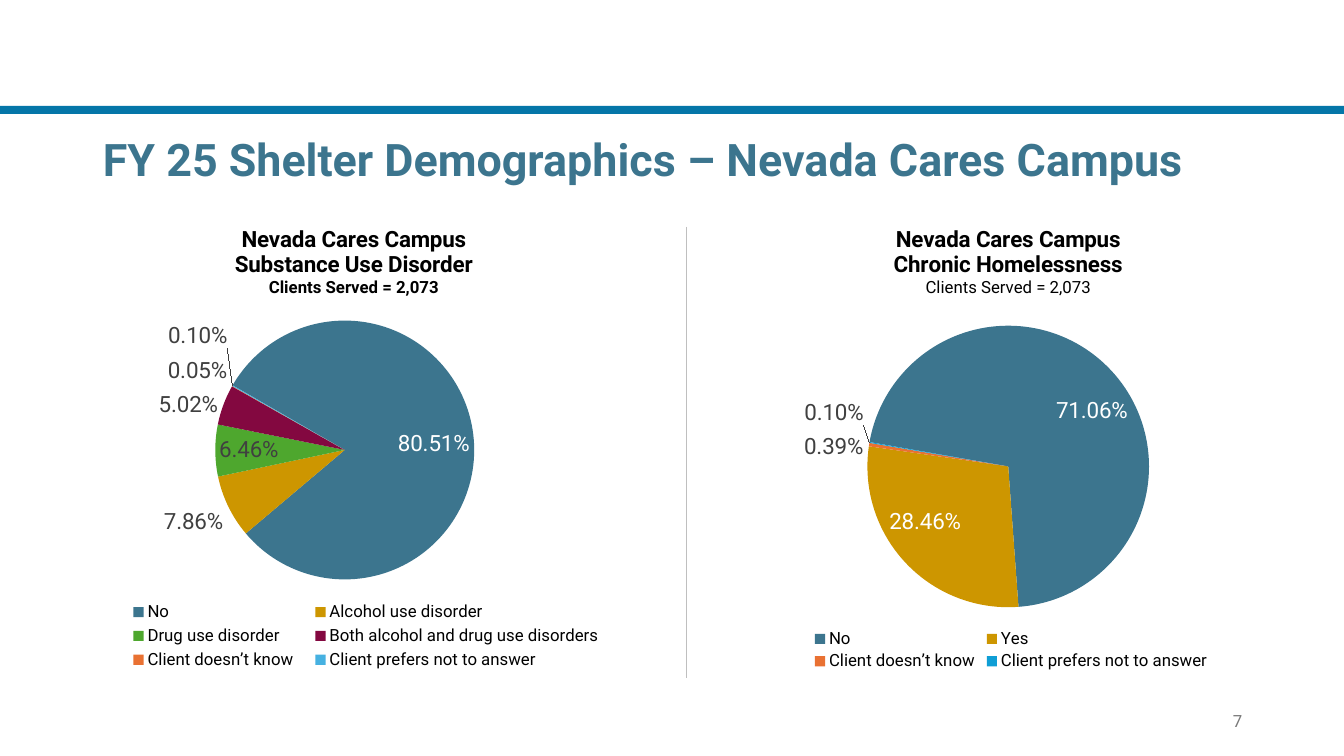
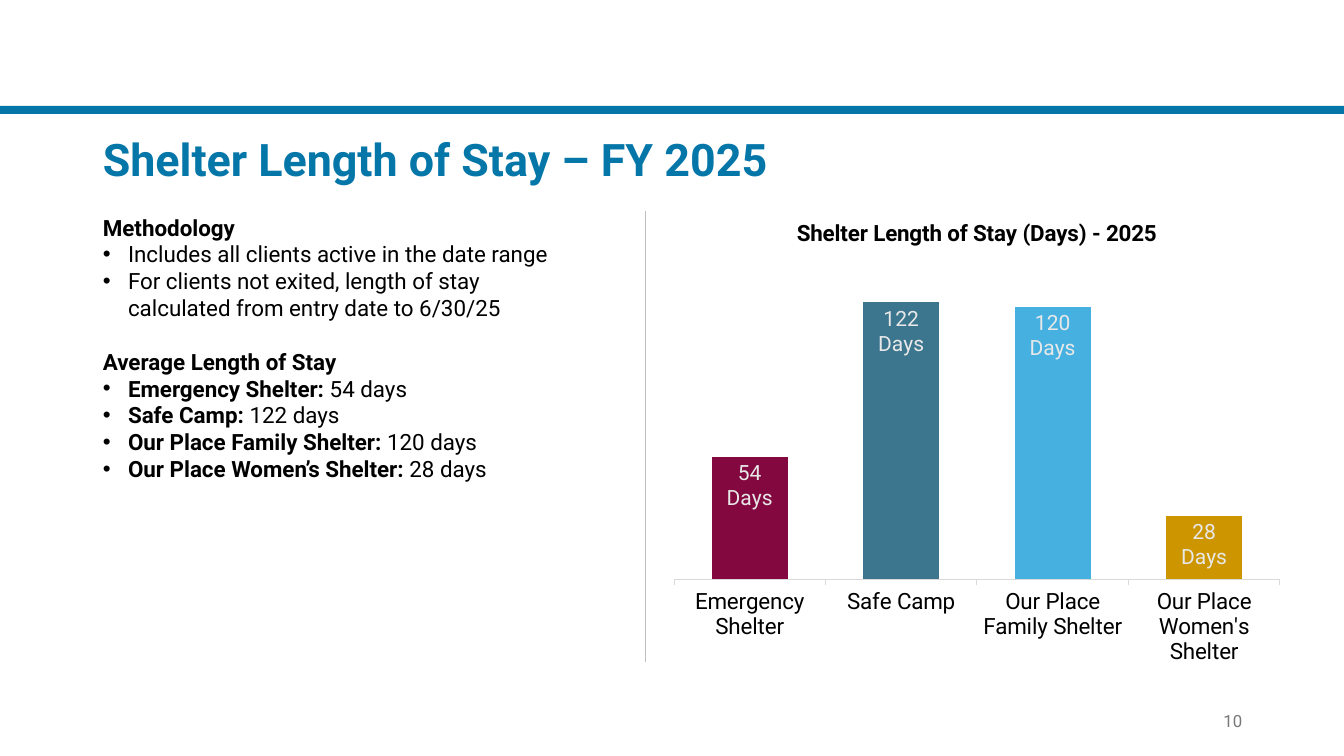
from lxml.etree import SubElement
from pptx import Presentation
from pptx.chart.data import CategoryChartData
from pptx.dml.color import RGBColor
from pptx.enum.chart import (XL_CHART_TYPE, XL_LABEL_POSITION,
                             XL_LEGEND_POSITION, XL_TICK_LABEL_POSITION,
                             XL_TICK_MARK)
from pptx.enum.shapes import MSO_CONNECTOR, MSO_SHAPE
from pptx.enum.text import MSO_ANCHOR, MSO_AUTO_SIZE, PP_ALIGN
from pptx.oxml.ns import qn
from pptx.util import Pt

SCALE = 9144  # EMU in one px, 100 px to the inch
FONT = "Roboto"
BLUE, TEAL, GOLD, GREEN = "0476A8", "3C758E", "CD9600", "4EA72E"
WINE, RUST, SKY, AZURE = "830840", "E97132", "46B1E1", "0F9ED5"
BLACK, WHITE, DARK, GRAY = "000000", "FFFFFF", "404040", "797979"
PALE, RULE, AXIS = "E8E8E8", "BFBFBF", "D9D9D9"


def px(*nums):
    return [n * SCALE for n in nums]


def color(code):
    return RGBColor.from_string(code)


def style(font, size, code=BLACK, bold=False):
    font.name, font.size, font.bold = FONT, Pt(size), bold
    font.color.rgb = color(code)


def add_run(para, text, size, code=BLACK, bold=False):
    run = para.add_run()
    run.text = text
    style(run.font, size, code, bold)


def next_para(frame, index):
    return frame.add_paragraph() if index else frame.paragraphs[0]


def set_layout(node, index, area, inner=False):
    """Place a chart part by fractions of the chart: x, y, w, h."""
    for old in node.findall(qn("c:layout")):
        node.remove(old)
    layout = node.makeelement(qn("c:layout"))
    node.insert(index, layout)
    manual = SubElement(layout, qn("c:manualLayout"))
    pairs = [("layoutTarget", "inner")] if inner else []
    pairs += [("xMode", "edge"), ("yMode", "edge")]
    pairs += zip("xywh", area)
    for tag, val in pairs:
        SubElement(manual, qn("c:" + tag)).set("val", str(val))


class Deck:
    def __init__(self):
        self.prs = Presentation()
        self.prs.slide_width, self.prs.slide_height = px(1333, 750)
        self.slide = None

    # Shared frame: band, title and page number
    def add_slide(self, layout, title, code, page):
        self.slide = self.prs.slides.add_slide(self.prs.slide_layouts[layout])
        self.band()
        self.title(title, code)
        self.page(page)

    def band(self):
        band = self.slide.shapes.add_shape(MSO_SHAPE.RECTANGLE,
                                           *px(0, 105, 1333, 8))
        band.shadow.inherit = False
        band.fill.solid()
        band.fill.fore_color.rgb = color(BLUE)
        band.line.fill.background()

    def place(self, shape, *box):
        shape.left, shape.top, shape.width, shape.height = px(*box)
        frame = shape.text_frame
        frame.word_wrap = True
        frame.auto_size = MSO_AUTO_SIZE.NONE
        return frame

    def title(self, text, code):
        frame = self.place(self.slide.shapes.title, 92, 123, 1150, 75)
        frame.vertical_anchor = MSO_ANCHOR.MIDDLE
        para = frame.paragraphs[0]
        para.alignment, para.line_spacing = PP_ALIGN.LEFT, 0.9
        add_run(para, text, 32, code, True)

    def page(self, num):
        box = self.slide.shapes.add_textbox(*px(942, 695, 300, 40))
        box.text_frame.word_wrap = True
        box.text_frame.vertical_anchor = MSO_ANCHOR.MIDDLE
        para = box.text_frame.paragraphs[0]
        para.alignment = PP_ALIGN.RIGHT
        add_run(para, str(num), 12, GRAY)

    def divide(self, x, top, end):
        line = self.slide.shapes.add_connector(MSO_CONNECTOR.STRAIGHT,
                                               *px(x, top, x, end))
        line.line.color.rgb = color(RULE)
        line.line.width = Pt(1)
        SubElement(line._element.spPr, qn("a:effectLst"))

    # Body text: groups of a heading and its bullets
    def body(self, groups, *box):
        frame = self.place(self.slide.placeholders[1], *box)
        frame.vertical_anchor = MSO_ANCHOR.TOP
        count = 0
        for head, items in groups:
            rows = [(False, head, "")] + [(True, *item) for item in items]
            for dot, bold, plain in rows:
                para = next_para(frame, count)
                self.bullet(para, dot)
                para.alignment = PP_ALIGN.LEFT
                para.space_before = Pt(0 if dot or not count else 19)
                if bold:
                    add_run(para, bold, 16, bold=True)
                if plain:
                    add_run(para, plain, 16)
                count += 1

    def bullet(self, para, dot):
        props = para._p.get_or_add_pPr()
        left = 25 * SCALE if dot else 0
        props.set("marL", str(left))
        props.set("indent", str(-left))
        if dot:
            SubElement(props, qn("a:buFont")).set("typeface", "Arial")
            SubElement(props, qn("a:buChar")).set("char", "•")
        else:
            SubElement(props, qn("a:buNone"))

    # Charts
    def chart(self, kind, box, heads, data, form, plot):
        """heads: (text, size, bold); data: (name, value, colour)."""
        table = CategoryChartData(number_format=form)
        table.categories = [row[0] for row in data]
        table.add_series("Series 1", [row[1] for row in data])
        chart = self.slide.shapes.add_chart(kind, *px(*box), table).chart
        style(chart.font, 16)
        chart.has_title = True
        frame = chart.chart_title.text_frame
        for i, head in enumerate(heads):
            text, size, bold = head
            add_run(next_para(frame, i), text, size, bold=bold)
        chart.has_legend = False
        set_layout(chart._chartSpace.chart.plotArea, 0, plot, True)
        series = chart.plots[0].series[0]
        for i, row in enumerate(data):
            part = series.points[i].format
            part.fill.solid()
            part.fill.fore_color.rgb = color(row[2])
            part.line.fill.background()
        return chart, series

    def labels(self, series, size, code, form, spot):
        marks = series.data_labels
        marks.show_value = True
        marks.number_format, marks.number_format_is_linked = form, False
        marks.position = spot
        style(marks.font, size, code)

    def pie(self, box, heads, data, start, plot, key, light):
        form, spot = "0.00%", XL_LABEL_POSITION.BEST_FIT
        chart, series = self.chart(XL_CHART_TYPE.PIE, box, heads, data,
                                   form, plot)
        chart.plots[0].vary_by_categories = True
        node = chart.plots[0]._element
        for old in node.findall(qn("c:firstSliceAng")):
            node.remove(old)
        SubElement(node, qn("c:firstSliceAng")).set("val", str(start))
        self.labels(series, 16, DARK, form, spot)
        for i in range(light):
            mark = series.points[i].data_label
            style(mark.font, 16, WHITE)
            mark.position = spot
        chart.has_legend = True
        legend = chart.legend
        legend.position = XL_LEGEND_POSITION.BOTTOM
        legend.include_in_layout = False
        style(legend.font, 12)
        set_layout(legend._element, 1, key)

    def bars(self, box, heads, data, plot, top):
        spot = XL_LABEL_POSITION.INSIDE_END
        chart, series = self.chart(XL_CHART_TYPE.COLUMN_CLUSTERED, box, heads,
                                   data, "General", plot)
        chart.plots[0].vary_by_categories = False
        chart.plots[0].gap_width = 100
        self.labels(series, 15, PALE, "General", spot)
        for i, row in enumerate(data):
            mark = series.points[i].data_label
            for j, text in enumerate((str(row[1]), "Days")):
                add_run(next_para(mark.text_frame, j), text, 15, PALE)
            mark.position = spot
        side, base = chart.value_axis, chart.category_axis
        side.minimum_scale, side.maximum_scale = 0, top
        side.has_major_gridlines = side.visible = False
        base.major_tick_mark = XL_TICK_MARK.OUTSIDE
        base.tick_label_position = XL_TICK_LABEL_POSITION.LOW
        base.format.line.color.rgb = color(AXIS)
        base.format.line.width = Pt(0.75)
        style(base.tick_labels.font, 16)


def main():
    deck = Deck()
    campus, served = "Nevada Cares Campus", "Clients Served = 2,073"
    unknown, private = "Client doesn’t know", "Client prefers not to answer"

    # Slide 1: two pies
    deck.add_slide(5, "FY 25 Shelter Demographics – " + campus, TEAL, 7)
    deck.divide(681, 225, 673)
    deck.pie((50, 206, 602, 467),
             [(campus, 16, True), ("Substance Use Disorder", 16, True),
              (served, 12, True)],
             [("No", 0.8051, TEAL),
              ("Alcohol use disorder", 0.0786, GOLD),
              ("Drug use disorder", 0.0646, GREEN),
              ("Both alcohol and drug use disorders", 0.0502, WINE),
              (unknown, 0.0005, RUST),
              (private, 0.001, SKY)],
             300, (0.27, 0.24, 0.43, 0.55), (0.11, 0.83, 0.82, 0.16), 1)
    deck.pie((709, 206, 582, 467),
             [(campus, 16, True), ("Chronic Homelessness", 16, True),
              (served, 12, False)],
             [("No", 0.7106, TEAL),
              ("Yes", 0.2846, GOLD),
              (unknown, 0.0039, RUST),
              (private, 0.001, AZURE)],
             280, (0.26, 0.25, 0.48, 0.6), (0.16, 0.89, 0.69, 0.1), 2)

    # Slide 2: method and stay by shelter
    deck.add_slide(1, "Shelter Length of Stay – FY 2025", BLUE, 10)
    deck.body([
        ("Methodology", [
            ("", "Includes all clients active in the date range"),
            ("", "For clients not exited, length of stay calculated "
                 "from entry date to 6/30/25")]),
        ("Average Length of Stay", [
            ("Emergency Shelter:", " 54 days"),
            ("Safe Camp:", " 122 days"),
            ("Our Place Family Shelter:", " 120 days"),
            ("Our Place Women’s Shelter:", " 28 days")]),
    ], 92, 207, 494, 442)
    deck.bars((656, 198, 626, 471),
              [("Shelter Length of Stay (Days) - 2025", 16, True)],
              [("Emergency Shelter", 54, WINE),
               ("Safe Camp", 122, TEAL),
               ("Our Place Family Shelter", 120, SKY),
               ("Our Place Women's Shelter", 28, GOLD)],
              (0.02, 0.13, 0.96, 0.67), 140)
    deck.divide(640, 209, 657)

    deck.prs.save("out.pptx")


if __name__ == "__main__":
    main()
